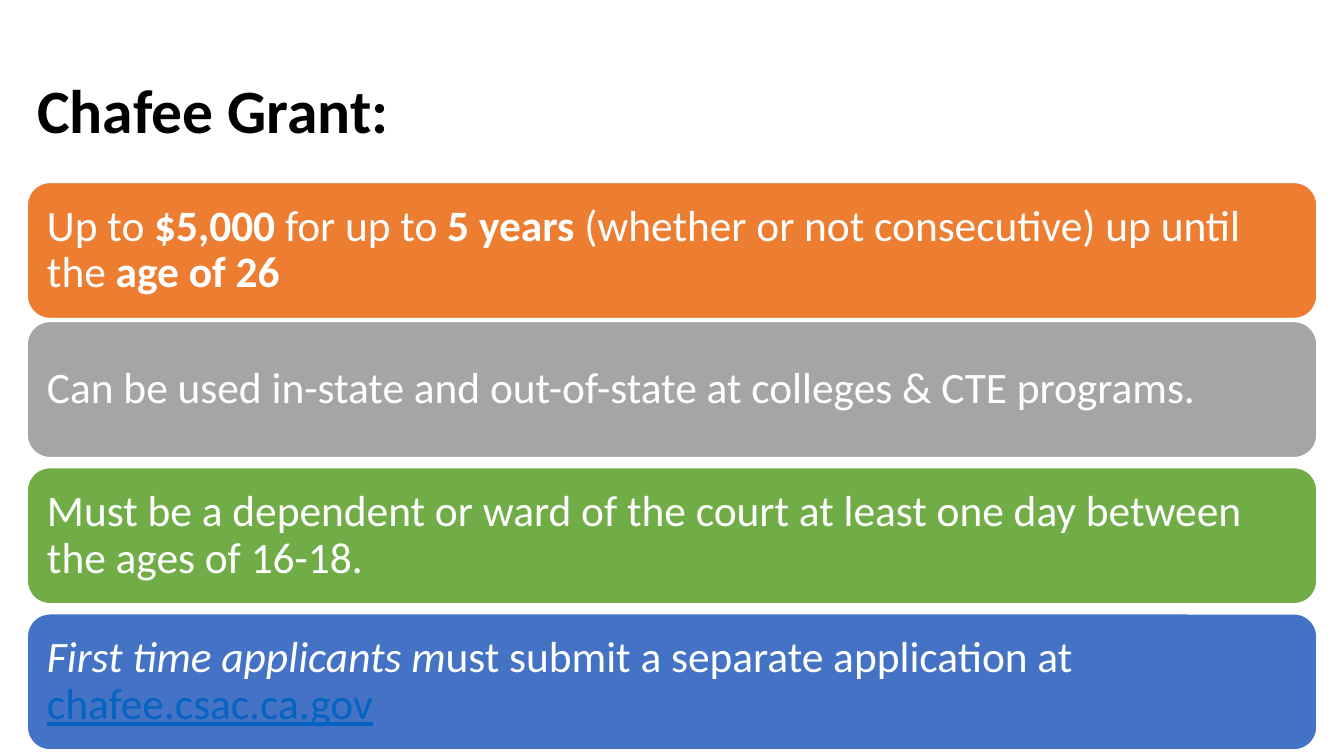
import pptx
import pptx.util
import pptx.dml.color
import pptx.enum.shapes
import pptx.enum.text

HEAD = "Chafee Grant:"
CARDS = [
    ("orange", [("Up to ", ""), ("$5,000 ", "bold"), ("for up to ", ""),
                ("5 years ", "bold"),
                ("(whether or not consecutive) up until the ", ""),
                ("age of 26", "bold")]),
    ("gray", [("Can be used in-state and out-of-state at colleges "
               "& CTE programs.", "")]),
    ("green", [("Must be a dependent or ward of the court at least one day "
                "between the ages of 16-18.", "")]),
    ("blue", [("First time applicants m", "italic"),
              ("ust submit a separate application at ", ""),
              ("chafee.csac.ca.gov", "link")]),
]

THEME = {
    "font": "Calibri", "head": 44, "body": 31, "edge": 1,
    "black": "000000", "white": "FFFFFF", "link": "0563C1",
    "orange": "ED7D31", "gray": "A5A5A5", "green": "70AD47", "blue": "4472C4",
}
STYLES = {
    "": {}, "bold": {"bold": True}, "italic": {"italic": True},
    "link": {"underline": True},
}

WIDE, HIGH = 13.33, 7.5
LEFT, SPAN = 2.03, 95.95
HEAD_TOP, HEAD_TALL = 9.33, 13.2
FIRST, NEXT, STEP, TALL = 24.13, 42.53, 19.33, 18

ANCHOR = pptx.enum.text.MSO_ANCHOR
FRAME = {"word_wrap": True, "auto_size": pptx.enum.text.MSO_AUTO_SIZE.NONE}
LINES = {"alignment": pptx.enum.text.PP_ALIGN.LEFT, "line_spacing": 0.9}
SIDES = ("margin_left", "margin_top", "margin_right", "margin_bottom")


def tint(name):
    return pptx.dml.color.RGBColor.from_string(THEME[name])


def apply(item, form):
    for key, value in form.items():
        setattr(item, key, value)


def area(top, tall):
    shares = (LEFT * WIDE, top * HIGH, SPAN * WIDE, tall * HIGH)
    return [pptx.util.Inches(share / 100) for share in shares]


def write(shape, parts, size, color, inset, anchor):
    frame = shape.text_frame
    apply(frame, FRAME)
    apply(frame, dict.fromkeys(SIDES, pptx.util.Inches(inset)))
    frame.vertical_anchor = anchor
    para = frame.paragraphs[0]
    apply(para, LINES)
    for text, style in parts:
        run = para.add_run()
        run.text = text
        base = {"name": THEME["font"], "size": pptx.util.Pt(THEME[size]),
                "bold": False}
        apply(run.font, {**base, **STYLES[style]})
        run.font.color.rgb = tint("link" if style == "link" else color)


def add_card(slide, top, color, parts):
    kind = pptx.enum.shapes.MSO_SHAPE.ROUNDED_RECTANGLE
    card = slide.shapes.add_shape(kind, *area(top, TALL))
    card.shadow.inherit = False
    card.fill.solid()
    card.fill.fore_color.rgb = tint(color)
    card.line.color.rgb = tint("white")
    card.line.width = pptx.util.Pt(THEME["edge"])
    write(card, parts, "body", "white", 0.13, ANCHOR.MIDDLE)


def main():
    deck = pptx.Presentation()
    apply(deck, {"slide_width": pptx.util.Inches(WIDE),
                 "slide_height": pptx.util.Inches(HIGH)})
    slide = deck.slides.add_slide(deck.slide_layouts[5])
    title = slide.shapes.title
    apply(title, dict(zip(("left", "top", "width", "height"),
                          area(HEAD_TOP, HEAD_TALL))))
    write(title, [(HEAD, "bold")], "head", "black", 0.1, ANCHOR.TOP)
    tops = [FIRST] + [NEXT + STEP * row for row in range(len(CARDS) - 1)]
    for top, (color, parts) in zip(tops, CARDS):
        add_card(slide, top, color, parts)
    deck.save("out.pptx")


if __name__ == "__main__":
    main()
